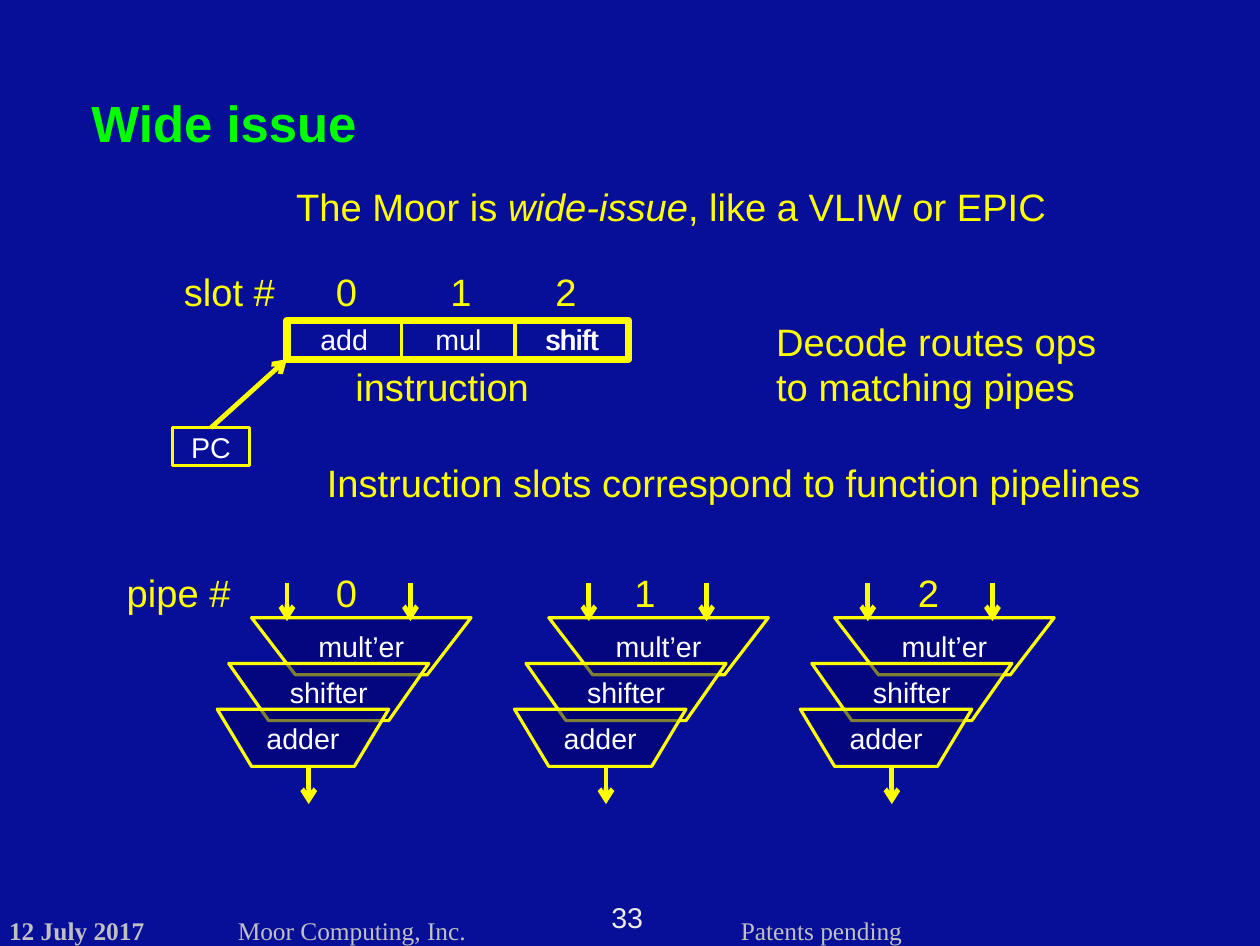
from pptx import Presentation
from pptx.dml.color import RGBColor
from pptx.enum.shapes import MSO_CONNECTOR, MSO_SHAPE
from pptx.enum.text import MSO_ANCHOR, MSO_AUTO_SIZE, PP_ALIGN
from pptx.oxml.ns import qn
from pptx.util import Inches, Pt
from lxml import etree

NAVY = RGBColor(0x07, 0x0E, 0x97)
DARK = RGBColor(0x00, 0x00, 0x66)
YELLOW = RGBColor(0xFF, 0xFF, 0x00)
GREEN = RGBColor(0x00, 0xFF, 0x00)
WHITE = RGBColor(0xFF, 0xFF, 0xFF)
SILVER = RGBColor(0xC0, 0xC0, 0xC0)
CREAM = RGBColor(0xEE, 0xEC, 0xE1)
RECT = MSO_SHAPE.RECTANGLE
FUNNEL = MSO_SHAPE.FLOWCHART_MANUAL_OPERATION
STRAIGHT = MSO_CONNECTOR.STRAIGHT
TOP, MIDDLE = MSO_ANCHOR.TOP, MSO_ANCHOR.MIDDLE
LEFT, CENTER = PP_ALIGN.LEFT, PP_ALIGN.CENTER
NO_FIT = MSO_AUTO_SIZE.NONE
SANS, SERIF = "Arial", "Times New Roman"


class Deck:
    def __init__(self, width, height):
        self.prs = Presentation()
        self.prs.slide_width = Inches(width)
        self.prs.slide_height = Inches(height)
        self.slide = self.prs.slides.add_slide(self.prs.slide_layouts[5])
        fill = self.slide.background.fill
        fill.solid()
        fill.fore_color.rgb = NAVY
        self.shapes = self.slide.shapes

    def style(self, frame, size, color, font=SANS, bold=False, align=LEFT):
        for para in frame.paragraphs:
            para.alignment = align
            para.font.size = Pt(size)
            para.font.name = font
            para.font.bold = bold
            para.font.color.rgb = color

    def trim(self, frame):
        """Remove the insets, so that the text starts at the box corner."""
        frame.margin_left = frame.margin_right = 0
        frame.margin_top = frame.margin_bottom = 0

    def title(self, text, x, y, w, h):
        box = self.shapes.title
        box.left, box.top = Inches(x), Inches(y)
        box.width, box.height = Inches(w), Inches(h)
        frame = box.text_frame
        frame.text = text
        frame.word_wrap = False
        frame.auto_size = NO_FIT
        frame.vertical_anchor = TOP
        self.trim(frame)
        self.style(frame, 32, GREEN, bold=True)

    def text(self, text, x, y, w, h=0.5, wrap=False):
        """Add a yellow label; parts between asterisks are italic."""
        box = self.shapes.add_textbox(Inches(x), Inches(y), Inches(w), Inches(h))
        frame = box.text_frame
        frame.word_wrap = wrap
        for i, part in enumerate(text.split("*")):
            run = frame.paragraphs[0].add_run()
            run.text = part
            if i % 2:
                run.font.italic = True
        self.style(frame, 24, YELLOW)
        return frame

    def footer(self, text, x, y, w, h, **look):
        frame = self.text(text, x, y, w, h)
        self.trim(frame)
        self.style(frame, **look)

    def box(self, kind, x, y, w, h, text="", line=2, fill=None):
        shape = self.shapes.add_shape(
            kind, Inches(x), Inches(y), Inches(w), Inches(h))
        shape.shadow.inherit = False
        shape.line.color.rgb = YELLOW
        shape.line.width = Pt(line)
        if fill is None:
            shape.fill.background()
        else:
            shape.fill.solid()
            shape.fill.fore_color.rgb = fill
            tint = shape._element.spPr.find(qn("a:solidFill"))[0]
            etree.SubElement(tint, qn("a:alpha"), val="50000")
        if text:
            frame = shape.text_frame
            frame.text = text
            frame.vertical_anchor = MIDDLE
            self.style(frame, 18, WHITE, align=CENTER)
        return shape

    def arrow(self, x1, y1, x2, y2, start=None):
        """Draw an arrow, joined to the top of the start shape if given."""
        link = self.shapes.add_connector(
            STRAIGHT, Inches(x1), Inches(y1), Inches(x2), Inches(y2))
        link.line.color.rgb = YELLOW
        link.line.width = Pt(3)
        props = link._element.spPr
        etree.SubElement(props.find(qn("a:ln")), qn("a:tailEnd"), type="arrow")
        etree.SubElement(props, qn("a:effectLst"))
        if start is not None:
            link.begin_connect(start, 0)


def main():
    deck = Deck(11.02, 8.27)
    deck.title("Wide issue", 0.8, 0.8, 2.34, 0.52)
    gray = {"size": 16, "color": SILVER, "font": SERIF}
    deck.footer("12 July 2017", 0.08, 8, 1.5, 0.25, bold=True, **gray)
    deck.footer("33", 5.33, 7.87, 0.31, 0.29, size=18, color=CREAM, align=CENTER)
    deck.footer("Moor Computing, Inc.", 2.08, 8, 2.5, 0.26, **gray)
    deck.footer("Patents pending", 6.48, 8, 1.8, 0.26, **gray)

    # Instruction and its slots; the last one is drawn twice for weight
    deck.box(RECT, 2.51, 2.8, 2.99, 0.34, line=4.5)
    for x, op in ((2.51, "add"), (3.51, "mul"), (4.5, "shift"), (4.51, "shift")):
        deck.box(RECT, x, 2.8, 1, 0.33, op)
    counter = deck.box(RECT, 1.51, 3.74, 0.67, 0.33, "PC")
    deck.arrow(1.84, 3.74, 2.51, 3.14, start=counter)

    intro = deck.text("The Moor is *wide-issue*, like a VLIW or EPIC", 2.27, 1.55, 7.2)
    intro.paragraphs[0].alignment = CENTER
    for text, x, y, w in (
        ("slot #", 1.51, 2.3, 1.01),
        ("instruction", 3.01, 3.13, 1.74),
        ("Instruction slots correspond to function pipelines", 2.76, 3.97, 7.39),
        ("pipe #", 1.01, 4.93, 1.12),
    ):
        deck.text(text, x, y, w)
    deck.text("Decode routes ops to matching pipes", 6.69, 2.73, 3.05, 0.91, wrap=True)
    for i, x in enumerate((2.84, 3.84, 4.76)):
        deck.text(str(i), x, 2.3, 0.39)

    # Pipelines: left edge, number label, two input arrows
    pipes = ((2.2, 2.84, 2.51, 3.59), (4.8, 5.45, 5.15, 6.18), (7.3, 7.93, 7.59, 8.68))
    units = (("mult’er", 0, 1.92), ("shifter", -0.2, 1.75), ("adder", -0.3, 1.5))
    for i, (left, label, *inputs) in enumerate(pipes):
        for row, (unit, shift, width) in enumerate(units):
            deck.box(FUNNEL, left + shift, 5.4 + 0.4 * row, width, 0.5, unit, fill=DARK)
        deck.text(str(i), label, 4.93, 0.39)
        for x in inputs:
            deck.arrow(x, 5.1, x, 5.43)
        deck.arrow(left + 0.5, 6.7, left + 0.5, 7.03)

    deck.prs.save("out.pptx")


if __name__ == "__main__":
    main()
